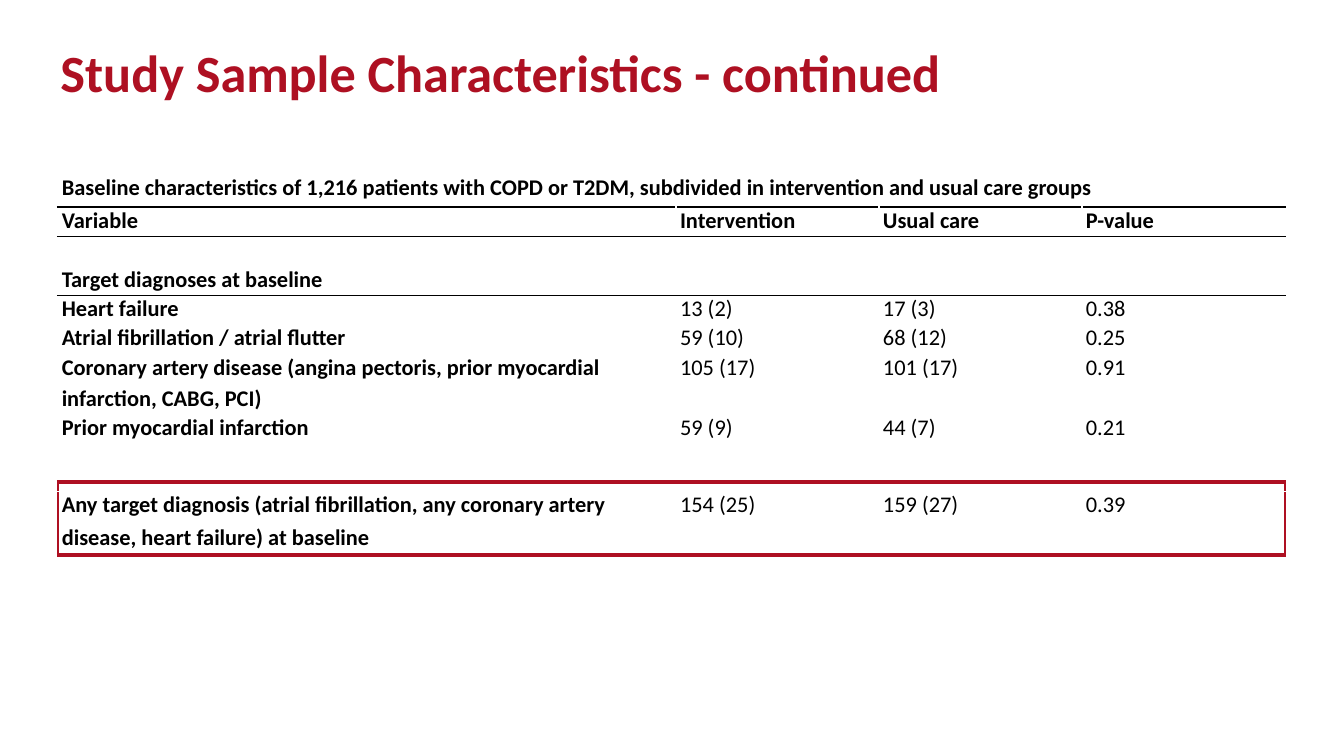
import pptx
import pptx.dml.color
import pptx.enum.text
import pptx.oxml
import pptx.oxml.ns
import pptx.util
from pptx.util import Inches

COLORS = {"red": "AE1022", "black": "000000", "white": "FFFFFF"}
FONT = "Calibri"
THIN, THICK = 1, 2.25

COLUMN_WIDTHS = [4.6, 1.51, 1.51, 1.51]
# Each row: height, line below (colour, points), line spacing in points, cell texts
ROWS = [
    (0.24, ("black", THIN), None,
     ["Baseline characteristics of 1,216 patients with COPD or T2DM, "
      "subdivided in intervention and usual care groups"]),
    (0.22, ("black", THIN), None,
     ["Variable", "Intervention", "Usual care", "P-value"]),
    (0.22, ("white", THIN), None, []),
    (0.22, ("black", THIN), None, ["Target diagnoses at baseline"]),
    (0.22, ("white", THIN), None,
     ["Heart failure", "13 (2)", "17 (3)", "0.38"]),
    (0.22, ("white", THIN), 14.3,
     ["Atrial fibrillation / atrial flutter", "59 (10)", "68 (12)", "0.25"]),
    (0.45, ("white", THIN), 14.3,
     ["Coronary artery disease (angina pectoris, prior myocardial\n"
      "infarction, CABG, PCI)", "105 (17)", "101 (17)", "0.91"]),
    (0.5, ("red", THICK), 14.3,
     ["Prior myocardial infarction", "59 (9)", "44 (7)", "0.21"]),
    (0.07, ("white", THIN), None, []),
    (0.47, ("red", THICK), None,
     ["Any target diagnosis (atrial fibrillation, any coronary artery\n"
      "disease, heart failure) at baseline", "154 (25)", "159 (27)", "0.39"]),
]
HEADER_ROWS = (0, 1)
BOXED_ROWS = (8, 9)


def apply_format(target, values):
    for name, value in values.items():
        setattr(target, name, value)


def format_font(font, size, color, bold):
    apply_format(font, {"name": FONT, "size": pptx.util.Pt(size), "bold": bold})
    font.color.rgb = pptx.dml.color.RGBColor.from_string(COLORS[color])


def add_title(slide, text):
    title = slide.shapes.title
    apply_format(title, {"left": Inches(0.44), "top": Inches(0.28),
                         "width": Inches(6.6), "height": Inches(0.49)})
    frame = title.text_frame
    apply_format(frame, {
        "margin_left": Inches(0.01), "margin_right": 0,
        "margin_top": Inches(0.02), "margin_bottom": 0, "word_wrap": True,
        "auto_size": pptx.enum.text.MSO_AUTO_SIZE.NONE,
        "vertical_anchor": pptx.enum.text.MSO_ANCHOR.TOP})
    paragraph = frame.paragraphs[0]
    paragraph.alignment = pptx.enum.text.PP_ALIGN.LEFT
    run = paragraph.add_run()
    run.text = text
    format_font(run.font, 28, "red", True)


def set_borders(cell, borders):
    properties = cell._tc.get_or_add_tcPr()
    for side, (color, width) in borders.items():
        properties.append(pptx.oxml.parse_xml(
            f'<a:ln{side} {pptx.oxml.ns.nsdecls("a")} w="{pptx.util.Pt(width)}">'
            f'<a:solidFill><a:srgbClr val="{COLORS[color]}"/></a:solidFill>'
            f'</a:ln{side}>'))


def fill_cell(cell, text, bold, line_spacing):
    apply_format(cell, {"margin_left": Inches(0.03), "margin_right": 0,
                        "margin_top": 0, "margin_bottom": 0})
    if not text:
        # A tiny font keeps an empty cell from stretching its row
        cell.text_frame.paragraphs[0]._p.append(pptx.oxml.parse_xml(
            f'<a:endParaRPr {pptx.oxml.ns.nsdecls("a")} sz="300"/>'))
        return
    cell.text = text
    for index, paragraph in enumerate(cell.text_frame.paragraphs):
        if line_spacing:
            paragraph.line_spacing = pptx.util.Pt(line_spacing)
        if index:
            paragraph.space_before = pptx.util.Pt(2.6)
        format_font(paragraph.runs[0].font, 12, "black", bold)


def add_characteristics_table(slide):
    frame = slide.shapes.add_table(
        len(ROWS), len(COLUMN_WIDTHS), Inches(0.43), Inches(1.3),
        Inches(sum(COLUMN_WIDTHS)), Inches(sum(row[0] for row in ROWS)))
    table = frame.table
    apply_format(table, {"first_row": False, "horz_banding": False})
    for column, width in zip(table.columns, COLUMN_WIDTHS):
        column.width = Inches(width)

    last = len(COLUMN_WIDTHS) - 1
    line_above = ("white", THIN)
    for row, (height, line_below, line_spacing, texts) in enumerate(ROWS):
        table.rows[row].height = Inches(height)
        outer = ("red" if row in BOXED_ROWS else "white", THIN)
        for column in range(last + 1):
            cell = table.cell(row, column)
            text = texts[column] if column < len(texts) else ""
            bold = column == 0 or row in HEADER_ROWS
            fill_cell(cell, text, bold, line_spacing)
            set_borders(cell, {
                "L": outer if column == 0 else ("white", THIN),
                "R": outer if column == last else ("white", THIN),
                "T": line_above, "B": line_below})
            cell.fill.background()
        line_above = line_below
    # The caption runs across all columns
    table.cell(0, 0).merge(table.cell(0, last))


def main():
    presentation = pptx.Presentation()
    # Widescreen, 16:9
    apply_format(presentation, {"slide_width": Inches(10),
                                "slide_height": Inches(10) * 9 // 16})
    slide = presentation.slides.add_slide(presentation.slide_layouts[5])
    add_title(slide, "Study Sample Characteristics - continued")
    add_characteristics_table(slide)
    presentation.save("out.pptx")


if __name__ == "__main__":
    main()
